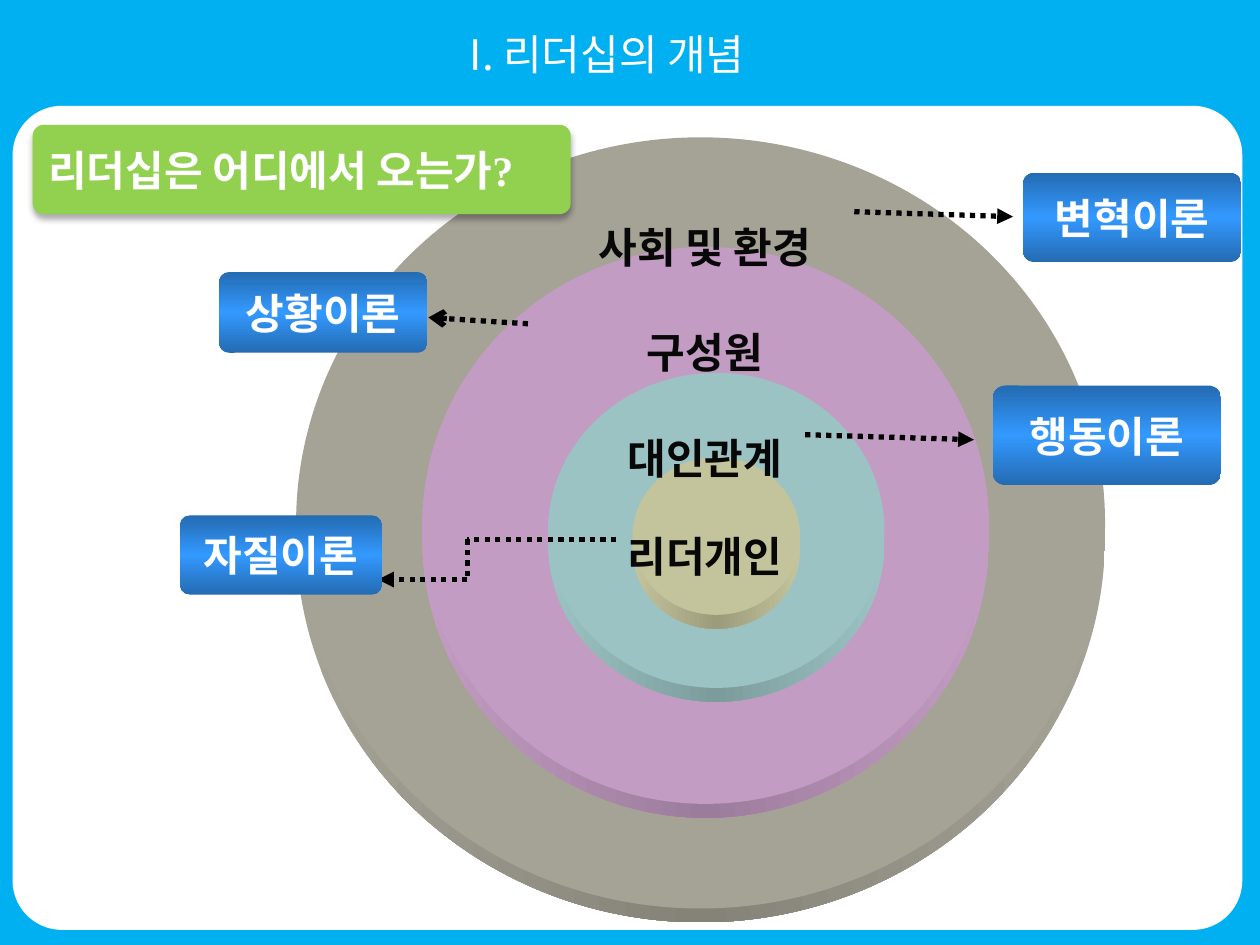
import copy

import pptx
import pptx.dml.color
import pptx.enum.dml
import pptx.enum.shapes
import pptx.enum.text
import pptx.oxml
import pptx.oxml.ns
import pptx.util
from pptx.util import Inches

COLORS = {
    "sky": "00B0F0", "white": "FFFFFF", "green": "92D050", "black": "000000",
    "label": "080808", "blue_edge": "246BB2", "blue_mid": "3399FF",
}
HANGUL_FONT = "Noto Sans CJK KR"
LATIN_FONT = "Times New Roman"
SHAPE = pptx.enum.shapes.MSO_SHAPE
ALIGN = pptx.enum.text.PP_ALIGN
ANCHOR = pptx.enum.text.MSO_ANCHOR
RIM_DEPTH = 0.11

# box (left, top, width, height), face colour, darkest rim colour
RINGS = [
    ((2.35, 1.09, 6.42, 6.12), "A5A296", "858378"),
    ((3.35, 1.96, 4.5, 4.42), "C39CC3", "9C7C9C"),
    ((4.35, 2.96, 2.67, 2.5), "9CC3C3", "7C9C9C"),
    ((5.02, 3.63, 1.33, 1.25), "C3C39C", "9C9C7C"),
]
# ring name and the space above it in points
RING_LABELS = [("사회 및 환경", 0), ("구성원", 30), ("대인관계", 31), ("리더개인", 25.5)]
THEORIES = [
    ("변혁이론", (8.12, 1.37, 1.73, 0.71)),
    ("상황이론", (1.74, 2.16, 1.65, 0.64)),
    ("행동이론", (7.88, 3.06, 1.81, 0.79)),
    ("자질이론", (1.43, 4.09, 1.6, 0.63)),
]
# points along the arrow, arrowhead type at its end
ARROWS = [
    ([(6.78, 1.68), (8.04, 1.72)], "triangle"),
    ([(4.19, 2.57), (3.4, 2.52)], "arrow"),
    ([(6.39, 3.45), (7.73, 3.49)], "triangle"),
    ([(4.89, 4.28), (3.71, 4.28), (3.71, 4.6), (3, 4.6)], "triangle"),
]


def rgb(value):
    return pptx.dml.color.RGBColor.from_string(value)


def xml(text):
    namespace = pptx.oxml.ns.nsdecls("a")
    return pptx.oxml.parse_xml(text.replace("/>", f" {namespace}/>", 1)
                               if text.endswith("/>") and text.count("<") == 1
                               else text.replace(">", f" {namespace}>", 1))


def add_filled(slide, kind, box, color=None):
    shape = slide.shapes.add_shape(kind, *map(Inches, box))
    shape.shadow.inherit = False
    shape.line.fill.background()
    if color:
        shape.fill.solid()
        shape.fill.fore_color.rgb = rgb(color)
    return shape


def fill_banded(shape, edge, middle, angle):
    """Gradient that runs edge - middle - edge."""
    shape.fill.gradient()
    shape.fill.gradient_angle = angle
    stop_list = shape.element.spPr.find(".//" + pptx.oxml.ns.qn("a:gsLst"))
    stop_list.append(copy.deepcopy(stop_list[0]))
    for stop, color, place in zip(shape.fill.gradient_stops,
                                  (edge, middle, edge), (0, 0.5, 1)):
        stop.color.rgb = rgb(color)
        stop.position = place


def add_span(para, text, color, font, bold=True):
    span = para.add_run()
    span.text = text
    span.font.size = pptx.util.Pt(24)
    span.font.bold = bold
    span.font.name = font
    span.font.color.rgb = rgb(color)
    span.font._element.find(pptx.oxml.ns.qn("a:latin")).addnext(
        xml(f'<a:ea typeface="{HANGUL_FONT}"/>'))


def place_title(slide, box):
    title = slide.shapes.title
    title.left, title.top, title.width, title.height = map(Inches, box)
    frame = title.text_frame
    frame.word_wrap = False
    frame.vertical_anchor = ANCHOR.MIDDLE
    frame.paragraphs[0].alignment = ALIGN.LEFT
    add_span(frame.paragraphs[0], "I. 리더십의 개념", COLORS["white"], HANGUL_FONT, False)


def add_backdrop(slide, box):
    """Blue page with a rounded white panel, both behind the title."""
    left, top, width, height = box
    page = add_filled(slide, SHAPE.RECTANGLE, box, COLORS["sky"])
    panel = add_filled(slide, SHAPE.ROUNDED_RECTANGLE,
                       (left + 0.1, top + 0.84, width - 0.24, height - 0.96),
                       COLORS["white"])
    panel.adjustments[0] = 0.06
    for shape in (page, panel):
        slide.shapes.title.element.addprevious(shape.element)


def add_disc(slide, box, face, rim_color):
    """Flat disc with a shaded rim showing below it."""
    left, top, width, height = box
    rim = add_filled(slide, SHAPE.OVAL, (left, top + RIM_DEPTH, width, height))
    fill_banded(rim, face, rim_color, 0)
    add_filled(slide, SHAPE.OVAL, box, face)


def add_ring_labels(slide, box):
    frame = slide.shapes.add_textbox(*map(Inches, box)).text_frame
    frame.word_wrap = True
    frame.margin_top = Inches(0.33)
    for index, (text, gap) in enumerate(RING_LABELS):
        para = frame.add_paragraph() if index else frame.paragraphs[0]
        para.alignment = ALIGN.CENTER
        para.line_spacing = pptx.util.Pt(30)
        para.space_before = pptx.util.Pt(gap)
        add_span(para, text, COLORS["label"], HANGUL_FONT)


def add_arrow(slide, points, head):
    """Dotted path through the points, with an arrowhead at the last one."""
    for start, end in zip(points, points[1:]):
        line = slide.shapes.add_connector(pptx.enum.shapes.MSO_CONNECTOR.STRAIGHT,
                                          *map(Inches, start + end))
        line.line.color.rgb = rgb(COLORS["black"])
        line.line.width = pptx.util.Pt(3)
        line.line.dash_style = pptx.enum.dml.MSO_LINE.ROUND_DOT
        properties = line.element.spPr
        properties.append(xml("<a:effectLst/>"))
    properties.find(pptx.oxml.ns.qn("a:ln")).append(xml(f'<a:tailEnd type="{head}"/>'))


def add_plate(slide, box, text, align):
    plate = add_filled(slide, SHAPE.ROUNDED_RECTANGLE, box)
    plate.adjustments[0] = 0.125
    frame = plate.text_frame
    frame.word_wrap = False
    frame.vertical_anchor = ANCHOR.MIDDLE
    frame.paragraphs[0].alignment = align
    add_span(frame.paragraphs[0], text, COLORS["white"], LATIN_FONT)
    return plate


def add_theory(slide, box, name):
    plate = add_plate(slide, box, name, ALIGN.CENTER)
    fill_banded(plate, COLORS["blue_edge"], COLORS["blue_mid"], 90)


def add_question(slide, box):
    plate = add_plate(slide, box, "리더십은 어디에서 오는가?", ALIGN.LEFT)
    plate.fill.solid()
    plate.fill.fore_color.rgb = rgb(COLORS["green"])
    effects = plate.element.spPr.find(pptx.oxml.ns.qn("a:effectLst"))
    effects.append(xml(
        '<a:outerShdw blurRad="44450" dist="27940" dir="5400000">'
        f'<a:srgbClr val="{COLORS["black"]}"><a:alpha val="32000"/></a:srgbClr>'
        '</a:outerShdw>'))


def main():
    deck = pptx.Presentation()
    deck.slide_width, deck.slide_height = Inches(10), Inches(7.5)
    slide = deck.slides.add_slide(deck.slide_layouts[5])
    place_title(slide, (3.63, 0.18, 2.7, 0.5))
    add_backdrop(slide, (0, 0, 10, 7.5))
    for box, face, rim_color in RINGS:
        add_disc(slide, box, face, rim_color)
    add_ring_labels(slide, (3.68, 1.41, 3.83, 3.17))
    for points, head in ARROWS:
        add_arrow(slide, points, head)
    for name, box in THEORIES:
        add_theory(slide, box, name)
    add_question(slide, (0.26, 0.99, 4.27, 0.71))
    deck.save("out.pptx")


if __name__ == "__main__":
    main()
